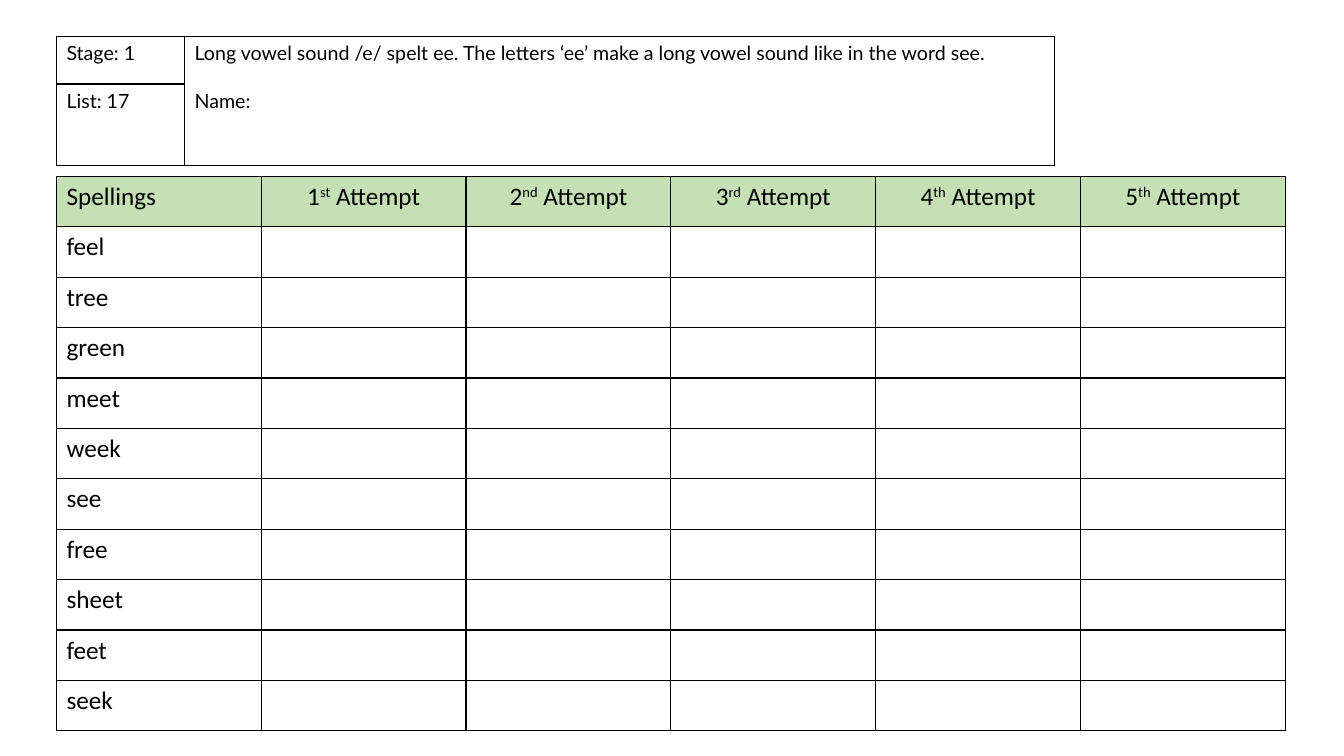
from lxml import etree
from pptx import Presentation
from pptx.dml.color import RGBColor
from pptx.enum import text
from pptx.oxml import ns
from pptx import util as u

HUES = {"ink": "000000", "head": "C5E0B4"}
TITLE = {"name": "Lato", "size": u.Pt(14)}
BODY = {"name": "Calibri", "size": u.Pt(18)}
WORDS = ["feel", "tree", "green", "meet", "week",
         "see", "free", "sheet", "feet", "seek"]
ENDS = ["st", "nd", "rd", "th", "th"]


class Sheet:
    def __init__(self, slide, hues):
        self.slide = slide
        self.hues = hues

    def hue(self, name):
        return RGBColor.from_string(self.hues[name])

    def grid(self, left, top, cols, rows):
        """Add a plain table with a thin border round every cell."""
        frame = self.slide.shapes.add_table(
            len(rows), len(cols), u.Pt(left), u.Pt(top),
            u.Pt(sum(cols)), u.Pt(sum(rows)))
        table = frame.table
        table.first_row = table.horz_banding = False
        for col, width in zip(table.columns, cols):
            col.width = u.Pt(width)
        for row, height in zip(table.rows, rows):
            row.height = u.Pt(height)
        for cell in table.iter_cells():
            self.edge(cell)
            cell.fill.background()
        return table

    def edge(self, cell):
        props = cell._tc.get_or_add_tcPr()
        for side in ("lnL", "lnR", "lnT", "lnB"):
            line = etree.SubElement(props, ns.qn("a:" + side), w=str(u.Pt(1)))
            fill = etree.SubElement(line, ns.qn("a:solidFill"))
            etree.SubElement(fill, ns.qn("a:srgbClr"), val=self.hues["ink"])

    def paint(self, cell, name):
        cell.fill.solid()
        cell.fill.fore_color.rgb = self.hue(name)

    def label(self, para, words, style, raised=()):
        """Fill a paragraph with runs; those indexed in raised are superscript."""
        for i, word in enumerate(words):
            run = para.add_run()
            run.text = word
            for key, value in style.items():
                setattr(run.font, key, value)
            run.font.color.rgb = self.hue("ink")
            if i in raised:
                run._r.get_or_add_rPr().set("baseline", "30000")


def main():
    deck = Presentation()
    deck.slide_width, deck.slide_height = u.Pt(960), u.Pt(540)
    sheet = Sheet(deck.slides.add_slide(deck.slide_layouts[6]), HUES)

    # Spelling grid
    table = sheet.grid(40.3, 126, [146.3] * 6, [36] * 11)
    for row, word in enumerate(["Spellings"] + WORDS):
        sheet.label(table.cell(row, 0).text_frame.paragraphs[0], [word], BODY)
    for col, end in enumerate(ENDS, 1):
        para = table.cell(0, col).text_frame.paragraphs[0]
        para.alignment = text.PP_ALIGN.CENTER
        sheet.label(para, [str(col), end, " Attempt"], BODY, raised=[1])
    for col in range(6):
        sheet.paint(table.cell(0, col), "head")

    # Stage, list and name box
    table = sheet.grid(40.3, 26, [91.5, 621.5], [34, 58])
    for row, word in enumerate(["Stage: 1", "List: 17"]):
        sheet.label(table.cell(row, 0).text_frame.paragraphs[0], [word], TITLE)
    rule = table.cell(0, 1)
    rule.merge(table.cell(1, 1))
    frame = rule.text_frame
    sheet.label(frame.paragraphs[0],
                ["Long vowel sound /e/ spelt ee. The letters ‘ee’ make "
                 "a long vowel sound like in the word see."], TITLE)
    name = frame.add_paragraph()
    name.space_before = u.Pt(17)
    sheet.label(name, ["Name:"], TITLE)

    deck.save("out.pptx")


if __name__ == "__main__":
    main()
